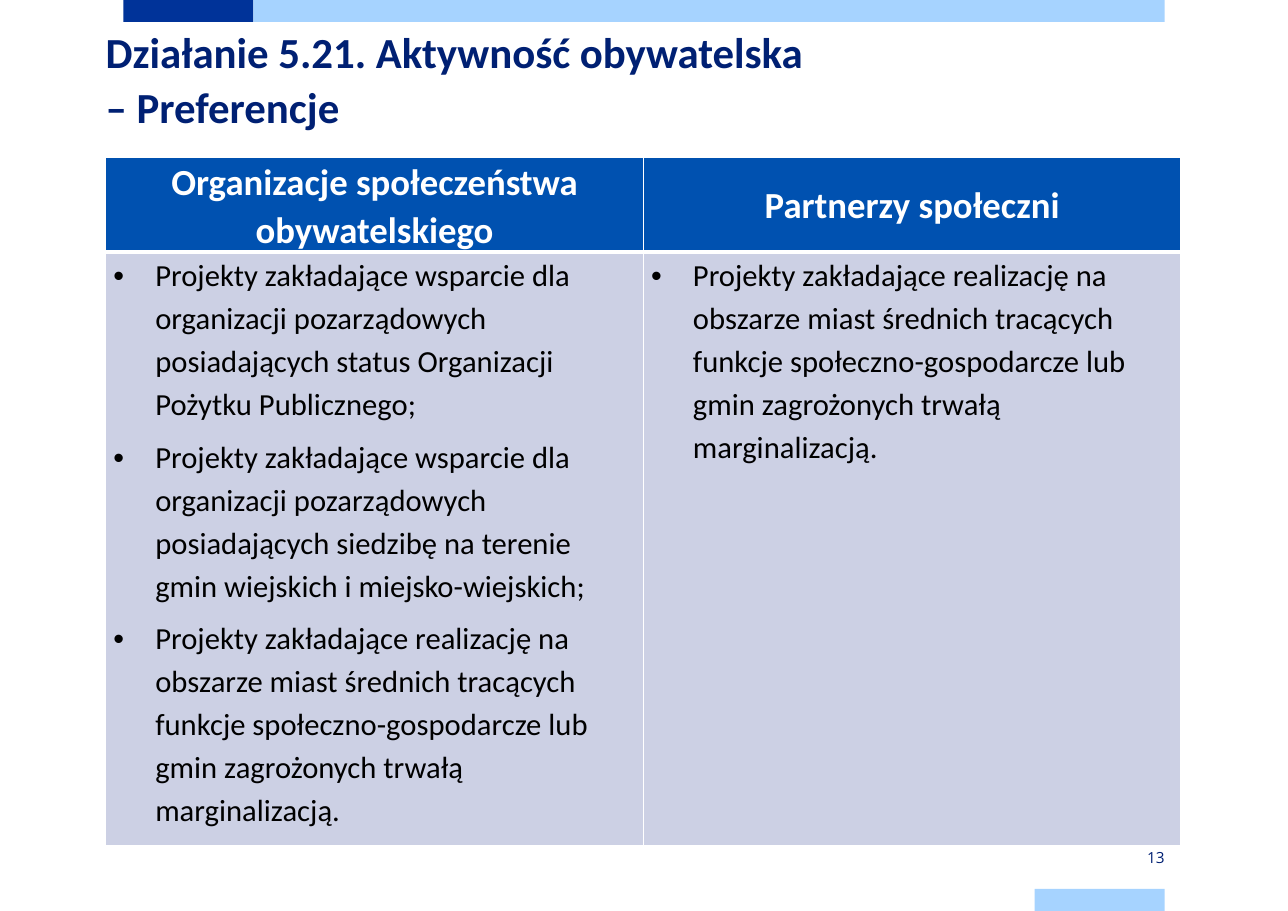
from lxml import etree
from pptx import Presentation
from pptx.dml.color import RGBColor
from pptx.enum.shapes import MSO_SHAPE
from pptx.enum.text import MSO_ANCHOR, PP_ALIGN
from pptx.oxml.ns import qn
from pptx.util import Pt

PX = 9144  # EMU per px, 100 px to the inch
RECTANGLE = MSO_SHAPE.RECTANGLE
TOP, MIDDLE = MSO_ANCHOR.TOP, MSO_ANCHOR.MIDDLE
LEFT, CENTER, RIGHT = PP_ALIGN.LEFT, PP_ALIGN.CENTER, PP_ALIGN.RIGHT

COLORS = {
    "navy": "002073", "royal": "003399", "sky": "A6D3FF", "header": "0051B0",
    "body": "CCD0E4", "white": "FFFFFF", "black": "000000",
}
TITLE_LINES = ["Działanie 5.21. Aktywność obywatelska", "– Preferencje"]
SHRINKING_CITIES = (
    "Projekty zakładające realizację na obszarze miast średnich tracących funkcje "
    "społeczno-gospodarcze lub gmin zagrożonych trwałą marginalizacją."
)
NGO_SUPPORT = "Projekty zakładające wsparcie dla organizacji pozarządowych posiadających "
PREFERENCES = {
    "Organizacje społeczeństwa obywatelskiego": [
        NGO_SUPPORT + "status Organizacji Pożytku Publicznego;",
        NGO_SUPPORT + "siedzibę na terenie gmin wiejskich i miejsko-wiejskich;",
        SHRINKING_CITIES,
    ],
    "Partnerzy społeczni": [SHRINKING_CITIES],
}

TITLE_FONT = {"name": "Calibri", "size": Pt(28), "bold": True}
HEADER_FONT = {"name": "Calibri", "size": Pt(24), "bold": True}
BODY_FONT = {"name": "Calibri", "size": Pt(20), "bold": False}
NUMBER_FONT = {"name": "Open Sans", "size": Pt(10)}
TITLE_PARAGRAPH = {"alignment": LEFT, "line_spacing": Pt(36)}
HEADER_PARAGRAPH = {"alignment": CENTER, "line_spacing": 1.07}
BODY_PARAGRAPH = {"alignment": LEFT, "line_spacing": 1.15, "space_after": Pt(6)}
NUMBER_PARAGRAPH = {"alignment": RIGHT}


def rgb(color):
    return RGBColor.from_string(COLORS[color])


def apply_format(target, values):
    for attribute, value in values.items():
        setattr(target, attribute, value)


def write(paragraph, text, font, color, layout):
    apply_format(paragraph, layout)
    run = paragraph.add_run()
    run.text = text
    apply_format(run.font, font)
    run.font.color.rgb = rgb(color)


def add_bullet(paragraph, indent):
    properties = paragraph._p.get_or_add_pPr()
    properties.set("marL", str(indent * PX))
    properties.set("indent", str(-indent * PX))
    etree.SubElement(properties, qn("a:buFont")).set("typeface", "Arial")
    etree.SubElement(properties, qn("a:buChar")).set("char", "•")


def add_bar(slide, box, color):
    bar = slide.shapes.add_shape(RECTANGLE, *(length * PX for length in box))
    bar.shadow.inherit = False
    bar.fill.solid()
    bar.fill.fore_color.rgb = rgb(color)
    bar.line.fill.background()


def add_bars(slide, box):
    """Place the two-part top bar and the short bottom bar at the edges of box."""
    left, top, width, height = box
    short, thickness = 118, 20
    add_bar(slide, (left, top, short, thickness), "royal")
    add_bar(slide, (left + short, top, width - short, thickness), "sky")
    add_bar(slide, (left + width - short, top + height - thickness, short, thickness), "sky")


def add_text_frame(slide, box, anchor, inset):
    frame = slide.shapes.add_textbox(*(length * PX for length in box)).text_frame
    apply_format(frame, {
        "word_wrap": True, "vertical_anchor": anchor, "margin_left": 0,
        "margin_right": 0, "margin_top": inset * PX, "margin_bottom": inset * PX,
    })
    return frame


def add_title(slide, box):
    paragraph = add_text_frame(slide, box, TOP, 0).paragraphs[0]
    for index, line in enumerate(TITLE_LINES):
        if index:
            paragraph.add_line_break()
        write(paragraph, line, TITLE_FONT, "navy", TITLE_PARAGRAPH)


def add_page_number(slide, box):
    paragraph = add_text_frame(slide, box, MIDDLE, 8).paragraphs[0]
    write(paragraph, "13", NUMBER_FONT, "navy", NUMBER_PARAGRAPH)


def style_cell(cell, fill, anchor, border_widths):
    apply_format(cell, {
        "margin_left": 7 * PX, "margin_right": 7 * PX, "margin_top": 0,
        "margin_bottom": 0, "vertical_anchor": anchor,
    })
    properties = cell._tc.get_or_add_tcPr()
    for side, width in border_widths.items():
        border = etree.SubElement(properties, qn(f"a:ln{side}"), w=str(Pt(width)))
        solid = etree.SubElement(border, qn("a:solidFill"))
        etree.SubElement(solid, qn("a:srgbClr"), val=COLORS["white"])
    cell.fill.solid()
    cell.fill.fore_color.rgb = rgb(fill)


def add_preferences_table(slide, box):
    left, top, width, height = box
    header_height = 85
    table = slide.shapes.add_table(
        2, len(PREFERENCES), left * PX, top * PX, width * PX, height * PX).table
    table.rows[0].height = header_height * PX
    table.rows[1].height = (height - header_height) * PX
    for column, (group, projects) in enumerate(PREFERENCES.items()):
        table.columns[column].width = width * PX // len(PREFERENCES)
        header, body = table.cell(0, column), table.cell(1, column)
        style_cell(header, "header", MIDDLE, {"L": 1, "R": 1, "T": 1, "B": 3})
        style_cell(body, "body", TOP, {"L": 1, "R": 1, "T": 3, "B": 1})
        write(header.text_frame.paragraphs[0], group, HEADER_FONT, "white", HEADER_PARAGRAPH)
        frame = body.text_frame
        for index, project in enumerate(projects):
            paragraph = frame.add_paragraph() if index else frame.paragraphs[0]
            add_bullet(paragraph, 38)
            write(paragraph, project, BODY_FONT, "black", BODY_PARAGRAPH)


def main():
    presentation = Presentation()
    presentation.slide_width = 1169 * PX
    presentation.slide_height = 827 * PX
    slide = presentation.slides.add_slide(presentation.slide_layouts[6])
    add_bars(slide, (112, 0, 945, 827))
    add_title(slide, (96, 20, 1024, 116))
    add_preferences_table(slide, (96, 143, 976, 624))
    add_page_number(slide, (939, 768, 118, 20))
    presentation.save("out.pptx")


if __name__ == "__main__":
    main()
